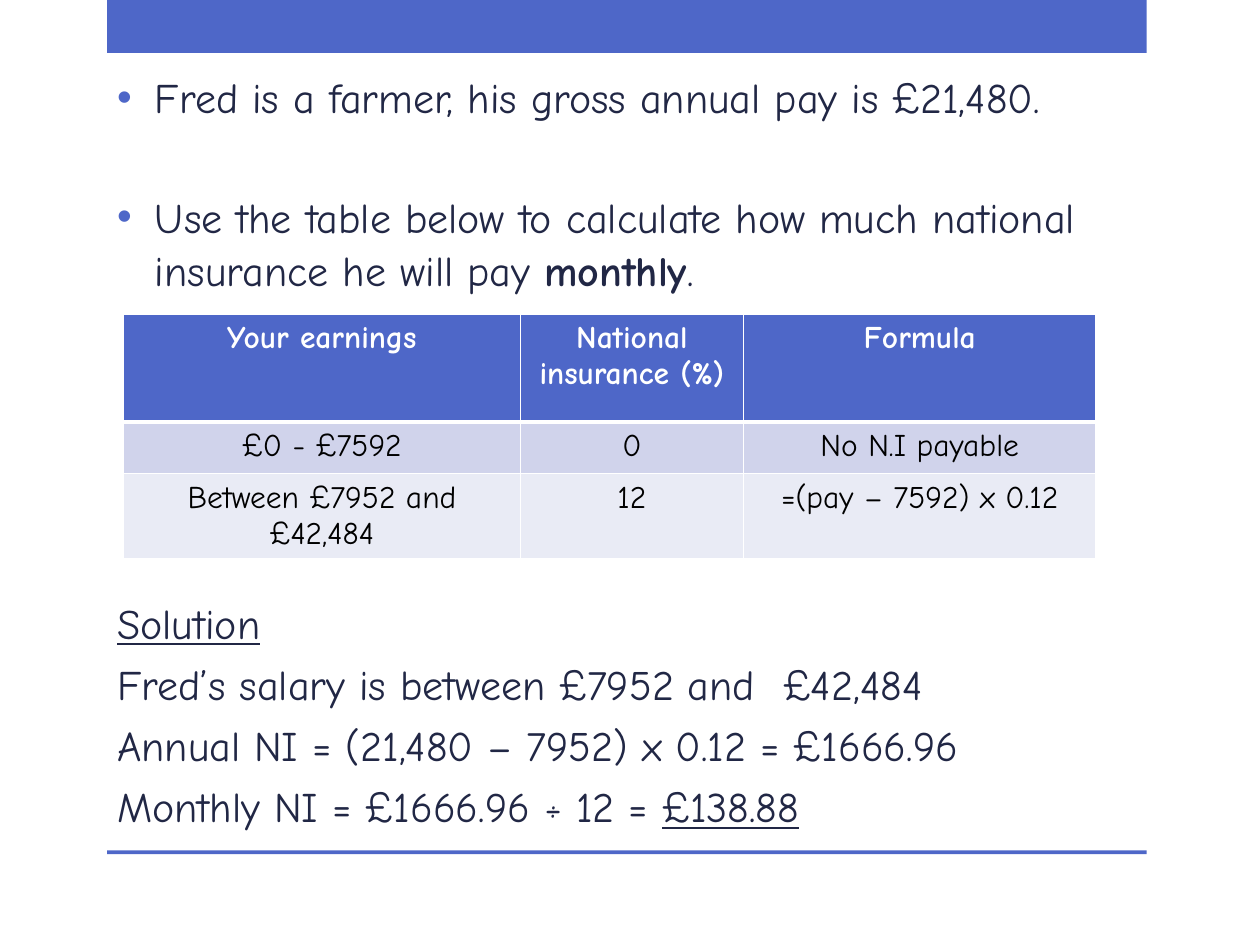
from dataclasses import dataclass

from lxml.etree import SubElement
from pptx import Presentation
from pptx.dml.color import RGBColor as Rgb
from pptx.enum.shapes import MSO_SHAPE as Preset
from pptx.enum.text import MSO_ANCHOR as Anchor, MSO_AUTO_SIZE as AutoSize, PP_ALIGN as Align
from pptx.oxml.ns import qn
from pptx.util import Inches, Pt


@dataclass(frozen=True)
class Theme:
    font: str = "Comic Neue"
    accent: str = "4E67C8"
    ink: str = "212745"
    black: str = "000000"
    white: str = "FFFFFF"
    bands: tuple = ("D0D3EB", "E9EBF5")
    body_size: float = 24
    table_size: float = 18
    line_spacing: float = 1.05
    paragraph_gap: float = 4.8


THEME = Theme()
WIDTH, HEIGHT = Inches(10), Inches(7.5)
MARGIN, CONTENT_WIDTH = 0.085, 0.825
COLUMNS = (3.15, 1.77, 2.8)
ROWS = (0.86, 0.41, 0.67)

QUESTION = [
    (["Fred is a farmer, his gross annual pay is £21,480."], 4.8),
    (["Use the table below to calculate how much national insurance he will pay ",
      ("monthly", {"bold": True}), "."], 38),
]
SOLUTION = [
    ([("Solution", {"underline": True})], 171.5),
    (["Fred’s salary is between £7952 and  £42,484"], THEME.paragraph_gap),
    (["Annual NI = (21,480 – 7952) x 0.12 = £1666.96"], THEME.paragraph_gap),
    (["Monthly NI = £1666.96 ÷ 12 = ", ("£138.88", {"underline": True})], THEME.paragraph_gap),
]
EARNINGS = [
    ("Your earnings", "National insurance (%)", "Formula"),
    ("£0 - £7592", "0", "No N.I payable"),
    ("Between £7952 and £42,484", "12", "=(pay – 7592) x 0.12"),
]


def add_text(paragraph, text, size=THEME.body_size, color=THEME.ink, bold=False, underline=False):
    run = paragraph.add_run()
    run.text = text
    font = run.font
    font.name, font.size = THEME.font, Pt(size)
    font.bold, font.underline = bold, underline
    font.color.rgb = Rgb.from_string(color)


def paint(target, color):
    target.fill.solid()
    target.fill.fore_color.rgb = Rgb.from_string(color)


def add_band(slide, top, height):
    band = slide.shapes.add_shape(
        Preset.RECTANGLE, int(WIDTH * MARGIN), int(HEIGHT * top),
        int(WIDTH * CONTENT_WIDTH), int(HEIGHT * height))
    band.shadow.inherit = False
    paint(band, THEME.accent)
    band.line.fill.background()


def set_bullet(paragraph, bulleted):
    props = paragraph._p.get_or_add_pPr()
    indent = Inches(0.3) if bulleted else 0
    props.set("marL", str(indent))
    props.set("indent", str(-indent))
    if bulleted:
        SubElement(SubElement(props, qn("a:buClr")), qn("a:srgbClr"), val=THEME.accent)
        SubElement(props, qn("a:buChar"), char="•")
    else:
        SubElement(props, qn("a:buNone"))


def fill_body(body):
    body.left, body.top = Inches(0.83), Inches(0.55)
    body.width, body.height = int(WIDTH * CONTENT_WIDTH), Inches(6.2)
    frame = body.text_frame
    frame.word_wrap, frame.auto_size = True, AutoSize.NONE
    frame.vertical_anchor = Anchor.TOP
    frame.margin_top = frame.margin_bottom = 0
    lines = [(*line, True) for line in QUESTION] + [(*line, False) for line in SOLUTION]
    for index, (parts, gap, bulleted) in enumerate(lines):
        paragraph = frame.add_paragraph() if index else frame.paragraphs[0]
        paragraph.line_spacing = THEME.line_spacing
        paragraph.space_before = Pt(gap)
        set_bullet(paragraph, bulleted)
        for part in parts:
            text, style = (part, {}) if isinstance(part, str) else part
            add_text(paragraph, text, **style)


def set_borders(cell, top, bottom):
    props = cell._tc.get_or_add_tcPr()
    for side, points in (("L", 1), ("R", 1), ("T", top), ("B", bottom)):
        line = SubElement(props, qn(f"a:ln{side}"), w=str(Pt(points)))
        SubElement(SubElement(line, qn("a:solidFill")), qn("a:srgbClr"), val=THEME.white)


def add_earnings_table(slide):
    table = slide.shapes.add_table(
        len(ROWS), len(COLUMNS), Inches(0.98), Inches(2.49),
        Inches(sum(COLUMNS)), Inches(sum(ROWS))).table
    for column, width in zip(table.columns, COLUMNS):
        column.width = Inches(width)
    for index, (row, height, texts) in enumerate(zip(table.rows, ROWS, EARNINGS)):
        row.height = Inches(height)
        header = index == 0
        for cell, text in zip(row.cells, texts):
            set_borders(cell, top=3 if index == 1 else 1, bottom=3 if header else 1)
            paint(cell, THEME.accent if header else THEME.bands[index - 1])
            paragraph = cell.text_frame.paragraphs[0]
            paragraph.alignment = Align.CENTER
            add_text(paragraph, text, size=THEME.table_size, bold=header,
                     color=THEME.white if header else THEME.black)


def main():
    deck = Presentation()
    deck.slide_width, deck.slide_height = WIDTH, HEIGHT
    slide = deck.slides.add_slide(deck.slide_layouts[1])
    title = slide.shapes.title.element
    title.getparent().remove(title)
    add_band(slide, top=0, height=0.056)
    add_band(slide, top=0.9, height=0.004)
    fill_body(slide.placeholders[1])
    add_earnings_table(slide)
    deck.save("out.pptx")


if __name__ == "__main__":
    main()
